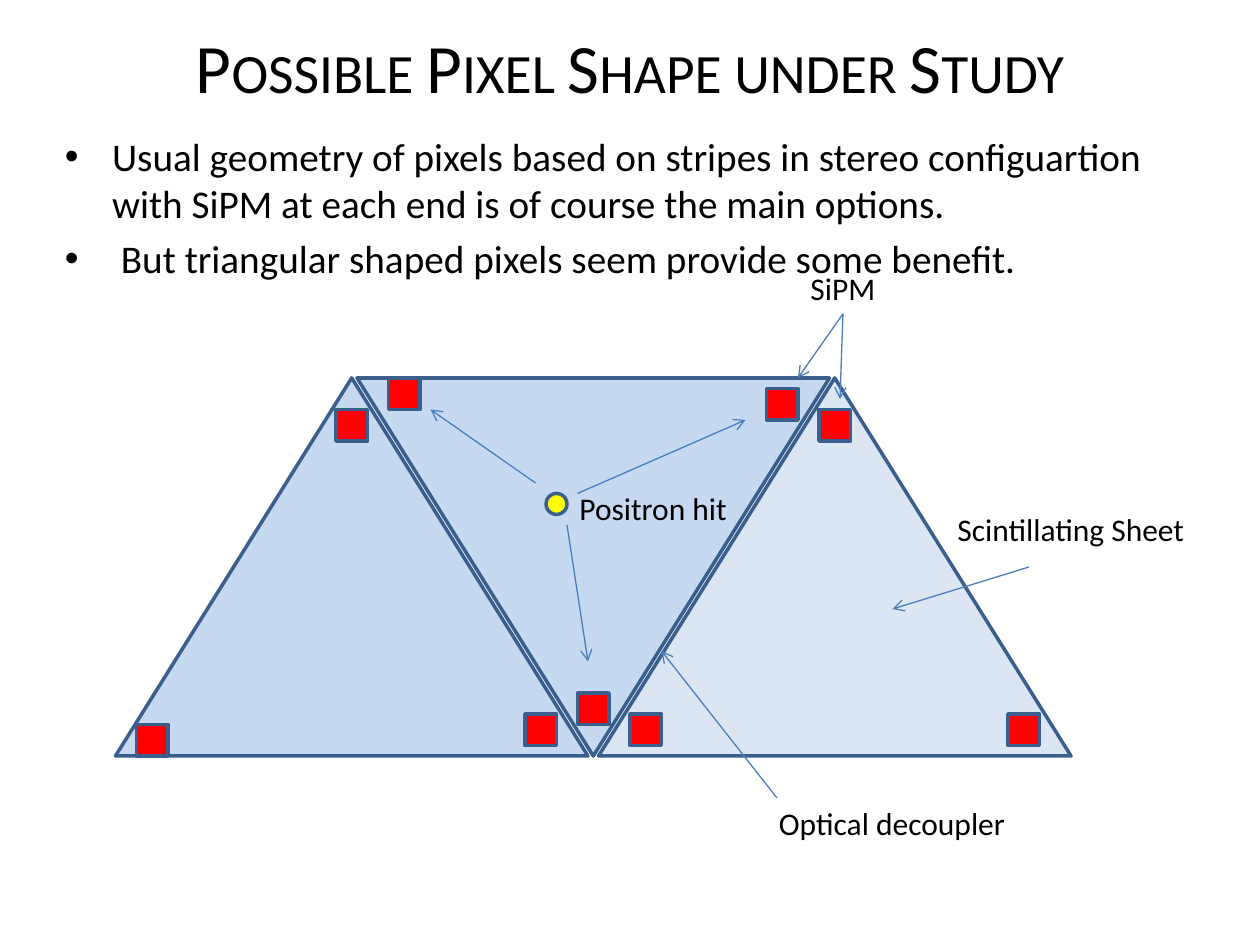
import pptx
import pptx.util
import pptx.dml.color
import pptx.enum.shapes
import pptx.enum.text
import pptx.oxml.ns
import lxml.etree

Pt = pptx.util.Pt
Shapes = pptx.enum.shapes.MSO_SHAPE
qn = pptx.oxml.ns.qn

COLORS = {
    "text": "000000",
    "outline": "3A5F8C",
    "arrow": "4B7EBC",
    "pixel": "C6D9F1",
    "sheet": "DCE6F2",
    "sipm": "FF0000",
    "positron": "FFFF00",
}


def rgb(name):
    return pptx.dml.color.RGBColor.from_string(COLORS[name])


class PixelSlide:
    font_name = "Calibri"

    def __init__(self, deck):
        self.slide = deck.slides.add_slide(deck.slide_layouts[5])
        self.shapes = self.slide.shapes

    def style(self, paragraph, size):
        paragraph.font.name = self.font_name
        paragraph.font.size = Pt(size)
        paragraph.font.color.rgb = rgb("text")

    def title(self, text, left, top, width, height):
        heading = self.shapes.title
        heading.left, heading.top = Pt(left), Pt(top)
        heading.width, heading.height = Pt(width), Pt(height)
        frame = heading.text_frame
        frame.text = text
        frame.auto_size = pptx.enum.text.MSO_AUTO_SIZE.NONE
        frame.vertical_anchor = pptx.enum.text.MSO_ANCHOR.MIDDLE
        paragraph = frame.paragraphs[0]
        paragraph.alignment = pptx.enum.text.PP_ALIGN.CENTER
        self.style(paragraph, 39.6)
        paragraph.runs[0]._r.get_or_add_rPr().set("cap", "small")

    def bullets(self, items, left, top, width, height):
        frame = self.shapes.add_textbox(Pt(left), Pt(top), Pt(width), Pt(height)).text_frame
        frame.word_wrap = True
        for index, item in enumerate(items):
            paragraph = frame.add_paragraph() if index else frame.paragraphs[0]
            paragraph.text = item
            paragraph.space_before = Pt(4.5)
            properties = paragraph._p.get_or_add_pPr()
            properties.set("marL", str(Pt(27)))
            properties.set("indent", str(-Pt(27)))
            lxml.etree.SubElement(properties, qn("a:buFont")).set("typeface", "Arial")
            lxml.etree.SubElement(properties, qn("a:buChar")).set("char", "•")
            self.style(paragraph, 22.4)

    def label(self, text, left, top, width):
        frame = self.shapes.add_textbox(Pt(left), Pt(top), Pt(width), Pt(29)).text_frame
        frame.word_wrap = False
        frame.auto_size = pptx.enum.text.MSO_AUTO_SIZE.SHAPE_TO_FIT_TEXT
        frame.text = text
        self.style(frame.paragraphs[0], 18)

    def figure(self, kind, fill, left, top, width, height, rotation=0):
        figure = self.shapes.add_shape(kind, Pt(left), Pt(top), Pt(width), Pt(height))
        figure.rotation = rotation
        figure.shadow.inherit = False
        figure.fill.solid()
        figure.fill.fore_color.rgb = rgb(fill)
        figure.line.color.rgb = rgb("outline")
        figure.line.width = Pt(2)

    def arrow(self, start, end):
        arrow = self.shapes.add_connector(
            pptx.enum.shapes.MSO_CONNECTOR.STRAIGHT, *map(Pt, start + end))
        arrow.line.color.rgb = rgb("arrow")
        arrow.line.width = Pt(0.75)
        lxml.etree.SubElement(arrow.line._get_or_add_ln(), qn("a:tailEnd")).set("type", "arrow")
        lxml.etree.SubElement(arrow._element.spPr, qn("a:effectLst"))


def main():
    deck = pptx.Presentation()
    deck.slide_width, deck.slide_height = Pt(720), Pt(540)
    page = PixelSlide(deck)
    page.title("Possible Pixel Shape under Study", 36, 21.6, 648, 32.4)

    for column, fill, rotation in ((2, "sheet", 0), (1, "pixel", 180), (0, "pixel", 0)):
        page.figure(Shapes.ISOSCELES_TRIANGLE, fill, 66 + 138 * column, 216, 270, 216, rotation)

    sipms = [(222, 216), (330, 396), (360, 408), (468, 234), (438, 222),
             (576, 408), (78, 414), (192, 234), (300, 408)]
    for left, top in sipms:
        page.figure(Shapes.RECTANGLE, "sipm", left, top, 18, 18)
    page.figure(Shapes.OVAL, "positron", 312, 282, 12, 12)

    sipm_label_foot = (481.7, 179.3)
    arrows = [
        ((330, 282), (426, 240)),
        ((306, 276), (246, 234)),
        ((324, 300), (336, 378)),
        (sipm_label_foot, (456, 216)),
        (sipm_label_foot, (480, 228)),
        ((588, 324), (510, 348)),
        ((444, 456), (378, 372)),
    ]
    for start, end in arrows:
        page.arrow(start, end)

    page.label("SiPM", 456, 150, 52)
    page.label("Positron hit", 324, 276, 99.4)
    page.label("Scintillating Sheet", 540, 288, 146)
    page.label("Optical decoupler", 438, 456, 145.4)

    page.bullets([
        "Usual geometry of pixels based on stripes in stereo configuartion "
        "with SiPM at each end is of course the main options.",
        " But triangular shaped pixels seem provide some benefit.",
    ], 30, 72, 648, 96)
    deck.save("out.pptx")


if __name__ == "__main__":
    main()
